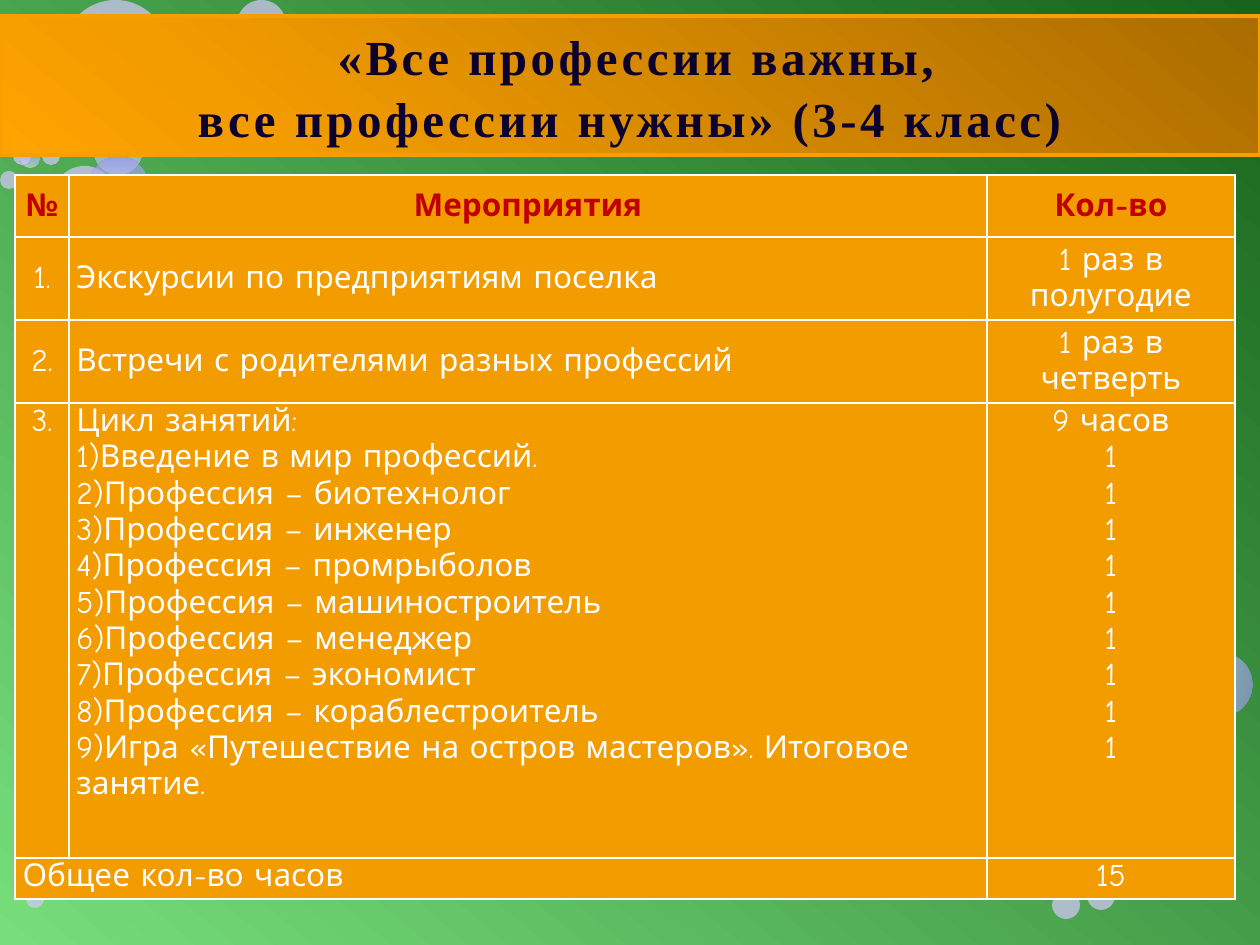
from lxml import etree
from pptx import Presentation
from pptx import util as u
from pptx.dml.color import RGBColor
from pptx.enum import shapes, text
from pptx.oxml.ns import nsdecls, qn

# Content
TITLE = [" «Все профессии важны,", "все профессии нужны» (3-4 класс)"]
LESSONS = [
    "Введение в мир профессий.",
    "Профессия – биотехнолог",
    "Профессия – инженер",
    "Профессия – промрыболов",
    "Профессия – машиностроитель",
    "Профессия – менеджер",
    "Профессия – экономист",
    "Профессия – кораблестроитель",
    "Игра «Путешествие на остров мастеров». Итоговое занятие.",
]
ROWS = [
    (["№"], ["Мероприятия"], ["Кол-во"]),
    (["1."], ["Экскурсии по предприятиям поселка"], ["1 раз в полугодие"]),
    (["2."], ["Встречи с родителями разных профессий"], ["1 раз в четверть"]),
    (["3."], ["Цикл занятий:"] + LESSONS, ["9 часов"] + ["1"] * len(LESSONS)),
    (["Общее кол-во часов"], None, ["15"]),
]

# Layout in px, 126 px to the inch
EMU = 914400 / 126
W, H = 1260, 945
TITLE_BOX = (0, 16, 1260, 139)
TABLE_AT = (15, 175)
COLS = [54, 918, 248]
ROW_H = [62, 83, 83, 455, 41]

COLORS = {
    "bubble": "D7C8FE", "amber": "F39C00", "title_line": "F79F01",
    "title": "0C002C", "head": "C00000", "white": "FFFFFF",
}
BACKDROP = [(0, "18641C"), (100, "77DE7B")]
TITLE_FILL = [(0, "AB6D00"), (80, "F39C00"), (100, "FEA300")]
GLOSS = [(0, "9890FF"), (50, "BFBBFF"), (100, "E0DEFF")]

# Bubbles: left, top, diameter, glossy
TOP_BUBBLES = [
    (94, 21, 126, 1), (53, 166, 63, 0), (94, 126, 49, 1), (89, 157, 59, 1),
    (63, 0, 105, 0), (237, 0, 49, 0), (231, 31, 59, 1), (278, 42, 28, 1),
    (141, 210, 28, 0), (13, 147, 18, 0), (126, 242, 28, 0), (0, 171, 18, 0),
    (21, 150, 18, 1), (42, 147, 18, 0),
]
LOW_BUBBLES = [
    (1094, 767, 126, 0), (1189, 653, 63, 1), (1143, 683, 49, 0),
    (1173, 685, 59, 0), (1082, 730, 105, 1), (28, 815, 30, 0),
    (1018, 795, 59, 0), (1022, 840, 28, 1), (1052, 891, 28, 0),
    (1186, 604, 18, 0), (1087, 882, 28, 0), (1212, 597, 18, 1),
    (1187, 614, 18, 1), (1179, 633, 18, 0), (34, 861, 18, 0),
    (60, 854, 18, 1), (35, 869, 18, 1), (26, 890, 18, 0),
]


def px(n):
    return u.Emu(round(n * EMU))


def color_xml(color, alpha=100):
    return f'<a:srgbClr val="{color}"><a:alpha val="{alpha * 1000}"/></a:srgbClr>'


def solid_xml(color, alpha=100):
    return f'<a:solidFill {nsdecls("a")}>{color_xml(color, alpha)}</a:solidFill>'


def gradient_xml(stops, angle, alpha=100):
    gs = "".join(f'<a:gs pos="{pos * 1000}">{color_xml(c, alpha)}</a:gs>' for pos, c in stops)
    return (f'<a:gradFill {nsdecls("a")} rotWithShape="1"><a:gsLst>{gs}</a:gsLst>'
            f'<a:lin ang="{angle * 60000}" scaled="0"/></a:gradFill>')


def paint(fill, parent, xml):
    fill.solid()
    fill.fore_color.rgb = RGBColor(0, 0, 0)
    parent.replace(parent.find(qn("a:solidFill")), etree.fromstring(xml))


def style(r, font, size, color, bold):
    r.font.name, r.font.size, r.font.bold = font, u.Pt(size), bold
    r.font.color.rgb = RGBColor.from_string(COLORS[color])


def add_bubble(s, x, y, d, glossy, rotation):
    sp = s.shapes.add_shape(shapes.MSO_SHAPE.OVAL, px(x), px(y), px(d), px(d))
    sp.shadow.inherit = False
    sp.rotation = rotation
    sp.line.fill.background()
    xml = gradient_xml(GLOSS, 90, 60) if glossy else solid_xml(COLORS["bubble"], 70)
    paint(sp.fill, sp._element.spPr, xml)


def add_title(s):
    sp = s.shapes.title
    s.shapes._spTree.append(sp._element)  # in front of the bubbles
    sp.left, sp.top, sp.width, sp.height = map(px, TITLE_BOX)
    paint(sp.fill, sp._element.spPr, gradient_xml(TITLE_FILL, 130))
    sp.line.color.rgb = RGBColor.from_string(COLORS["title_line"])
    sp.line.width = u.Pt(2)
    tf = sp.text_frame
    tf.word_wrap, tf.auto_size = True, text.MSO_AUTO_SIZE.NONE
    tf.vertical_anchor = text.MSO_ANCHOR.MIDDLE
    p = tf.paragraphs[0]
    p.alignment, p.line_spacing = text.PP_ALIGN.CENTER, 1.05
    for i, line in enumerate(TITLE):
        if i:
            p.add_line_break()
        r = p.add_run()
        r.text = line
        style(r, "Times New Roman", 28, "title", True)
        rPr = r.font._element
        rPr.set("spc", "200")
        rPr.insert(0, etree.fromstring(
            f'<a:ln {nsdecls("a")} w="9525">{solid_xml(COLORS["title"])}</a:ln>'))


def number(p):
    pPr = p._p.get_or_add_pPr()
    pPr.set("marL", "0")
    pPr.set("indent", str(-u.Inches(0.31)))
    etree.SubElement(pPr, qn("a:buFont"), typeface="+mj-lt")
    etree.SubElement(pPr, qn("a:buAutoNum"), type="arabicParenR")


def border(cell):
    tcPr = cell._tc.get_or_add_tcPr()
    for i, side in enumerate(("lnL", "lnR", "lnT", "lnB")):
        tcPr.insert(i, etree.fromstring(
            f'<a:{side} {nsdecls("a")} w="12700">{solid_xml(COLORS["white"])}</a:{side}>'))


def fill_cell(cell, lines, head, middle, centred):
    cell.margin_left = cell.margin_right = u.Inches(0.06)
    cell.margin_top = cell.margin_bottom = 0
    cell.vertical_anchor = text.MSO_ANCHOR.MIDDLE if middle else text.MSO_ANCHOR.TOP
    tf = cell.text_frame
    for i, line in enumerate(lines):
        p = tf.add_paragraph() if i else tf.paragraphs[0]
        p.alignment = text.PP_ALIGN.CENTER if centred else text.PP_ALIGN.LEFT
        if line in LESSONS:
            number(p)
        r = p.add_run()
        r.text = line
        style(r, "Comic Neue", 18, "head" if head else "white", head)


def add_plan(s):
    tbl = s.shapes.add_table(len(ROWS), len(COLS), *map(px, (*TABLE_AT, sum(COLS), sum(ROW_H)))).table
    for col, w in zip(tbl.columns, COLS):
        col.width = px(w)
    for row, h in zip(tbl.rows, ROW_H):
        row.height = px(h)
    last = len(ROWS) - 1
    tbl.cell(last, 0).merge(tbl.cell(last, 1))
    for i, row in enumerate(ROWS):
        for j, lines in enumerate(row):
            cell = tbl.cell(i, j)
            cell.fill.solid()
            cell.fill.fore_color.rgb = RGBColor.from_string(COLORS["amber"])
            border(cell)
            if lines:
                centred = i == 0 or j == 2 or (j == 0 and i < last)
                fill_cell(cell, lines, i == 0, i < 3, centred)


def main():
    prs = Presentation()
    prs.slide_width, prs.slide_height = px(W), px(H)
    s = prs.slides.add_slide(prs.slide_layouts[5])
    # Backdrop
    fill = s.background.fill
    fill.solid()
    paint(fill, s._element.cSld.bg.bgPr, gradient_xml(BACKDROP, 130))
    for group, rotation in ((TOP_BUBBLES, 0), (LOW_BUBBLES, 103.3)):
        for bubble in group:
            add_bubble(s, *bubble, rotation)
    # Heading and plan
    add_title(s)
    add_plan(s)
    prs.save("out.pptx")


if __name__ == "__main__":
    main()
